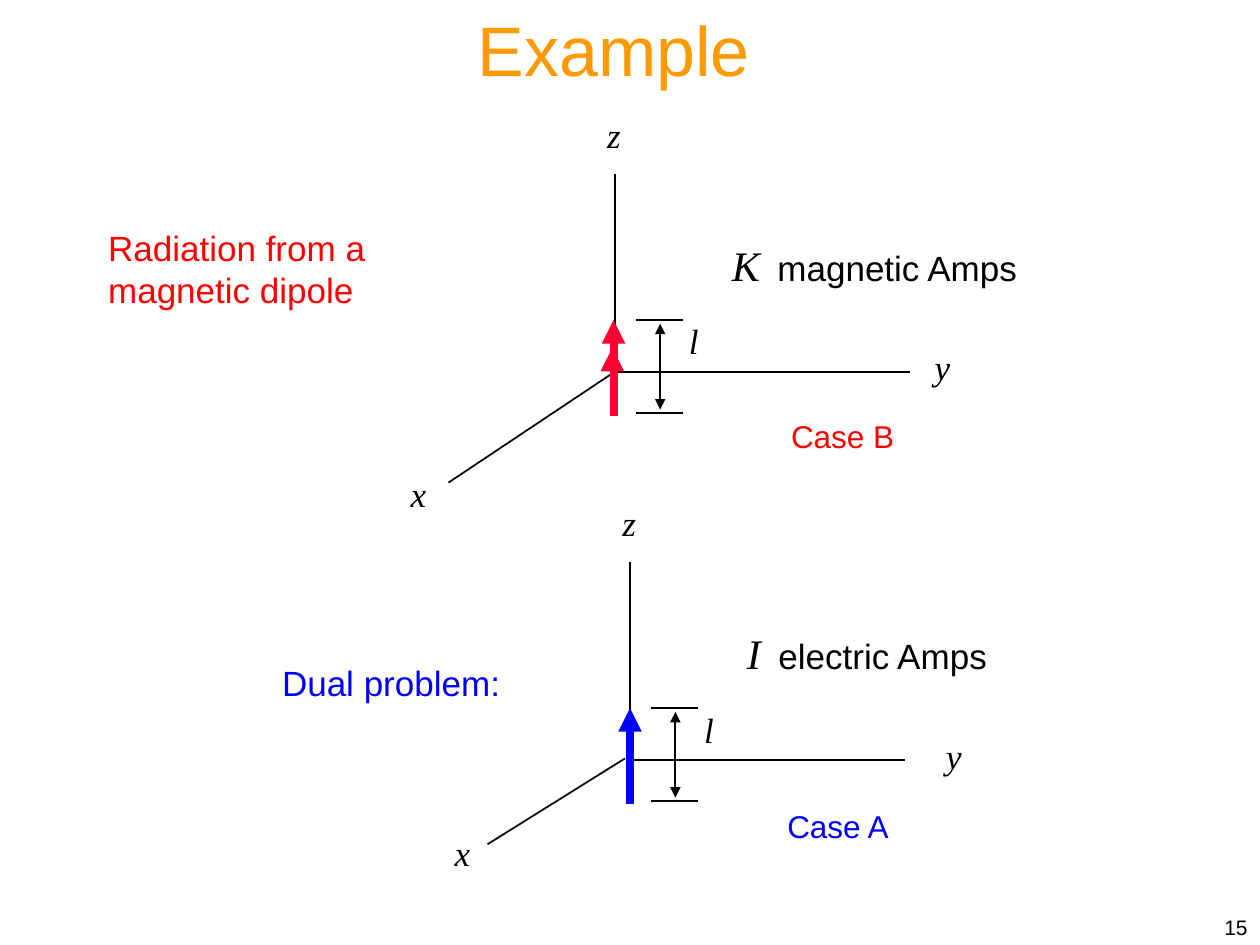
from pptx import Presentation
from pptx.dml.color import RGBColor
from pptx.enum.shapes import MSO_CONNECTOR as CONN
from pptx.enum.text import MSO_AUTO_SIZE as AUTO, PP_ALIGN as ALIGN
from pptx.oxml.ns import qn
from pptx.util import Inches, Pt
from lxml import etree

SANS, SERIF = "Arial", "Times New Roman"
BLACK, RED, BLUE = "000000", "FF0000", "0000FF"


def color(hex_code):
    return RGBColor.from_string(hex_code)


def add_run(p, text, size, font=SANS, hex_code=BLACK, italic=False):
    r = p.add_run()
    r.text = text
    r.font.size = Pt(size)
    r.font.name = font
    r.font.italic = italic
    r.font.color.rgb = color(hex_code)
    return r


def add_text(shapes, box, text, size, font=SANS, hex_code=BLACK,
             italic=False, align=ALIGN.LEFT, wrap=True):
    sp = shapes.add_textbox(*[Inches(v) for v in box])
    tf = sp.text_frame
    tf.word_wrap = wrap
    tf.auto_size = AUTO.SHAPE_TO_FIT_TEXT
    p = tf.paragraphs[0]
    p.alignment = align
    add_run(p, text, size, font, hex_code, italic)
    return p


def add_symbol(shapes, x, y, letter, width=0.45):
    add_text(shapes, (x, y, width, 0.43), letter, 20, SERIF, italic=True)


def add_line(shapes, start, end, hex_code=BLACK, width=1, arrows=()):
    """Draw a line; arrows lists the ends ("headEnd", "tailEnd") with a tip."""
    s = shapes.add_connector(
        CONN.STRAIGHT, *[Inches(v) for v in (*start, *end)])
    s.line.color.rgb = color(hex_code)
    s.line.width = Pt(width)
    ln = s.line._get_or_add_ln()
    for tip in arrows:
        etree.SubElement(ln, qn("a:" + tip)).set("type", "triangle")
    etree.SubElement(s._element.spPr, qn("a:effectLst"))


def add_current_label(shapes, x, y, width, symbol, unit):
    p = add_text(shapes, (x, y, width, 0.5), symbol, 24, SERIF,
                 italic=True, wrap=False)
    gap = add_run(p, " ", 20, SERIF)
    gap.font._element.set("spc", "500")  # widen the gap by 5 pt
    add_run(p, unit, 20)


def add_dipole(shapes, origin, x_axis, y_end, x_label, y_label,
               current, arrow_x, arrow_color):
    ox, oy = origin

    # Axes and their names
    add_line(shapes, origin, (y_end, oy))
    add_line(shapes, (ox, oy - 0.09), (ox, oy - 1.57))
    add_line(shapes, *x_axis)
    add_symbol(shapes, *x_label, "x")
    add_symbol(shapes, *y_label, "y")
    add_symbol(shapes, ox - 0.16, oy - 2.1, "z")

    # Length dimension
    top, bottom = oy - 0.41, oy + 0.33
    for y in (top, bottom):
        add_line(shapes, (ox + 0.17, y), (ox + 0.54, y))
    add_line(shapes, (ox + 0.36, top + 0.03), (ox + 0.36, bottom - 0.03),
             arrows=("headEnd", "tailEnd"))
    add_symbol(shapes, ox + 0.49, oy - 0.46, "l", 0.4)

    # Current and its arrow
    add_current_label(shapes, ox + 0.83, oy - 1.1, *current)
    add_line(shapes, (arrow_x, oy + 0.35), (arrow_x, top),
             arrow_color, 4.5, ("tailEnd",))


def main():
    prs = Presentation()
    prs.slide_width, prs.slide_height = Inches(10), Inches(7.5)
    slide = prs.slides.add_slide(prs.slide_layouts[6])
    shapes = slide.shapes

    # Title and statement
    add_text(shapes, (3.21, 0, 3.32, 0.77), "Example", 40,
             hex_code="FF9900", align=ALIGN.CENTER)
    add_text(shapes, (0.76, 1.75, 2.5, 0.77),
             "Radiation from a magnetic dipole", 20, hex_code=RED)

    # Case B: magnetic dipole
    magnetic = shapes.add_group_shape().shapes
    add_dipole(magnetic, (4.88, 2.95), ((4.88, 2.95), (3.56, 3.83)), 7.22,
               (3.16, 3.7), (7.32, 2.69), (2.48, "K", "magnetic Amps"),
               4.87, "FF0033")
    add_line(magnetic, (4.86, 2.85), (4.86, 2.76), "FF0033", 4.5,
             ("tailEnd",))
    add_text(shapes, (6.18, 3.26, 1.03, 0.4), "Case B", 18,
             hex_code=RED, wrap=False)

    # Case A: electric dipole
    add_text(shapes, (2.14, 5.2, 1.93, 0.43), "Dual problem:", 20,
             hex_code=BLUE, wrap=False)
    electric = shapes.add_group_shape().shapes
    add_dipole(electric, (5, 6.03), ((4.96, 6.02), (3.87, 6.7)), 7.18,
               (3.51, 6.55), (7.41, 5.78), (2.13, "I", "electric Amps"),
               5, BLUE)
    add_text(electric, (6.15, 6.36, 1.03, 0.4), "Case A", 18,
             hex_code=BLUE, wrap=False)

    # Page number
    add_text(shapes, (7.92, 7.21, 2.08, 0.29), "15", 12, align=ALIGN.RIGHT)

    prs.save("out.pptx")


if __name__ == "__main__":
    main()
